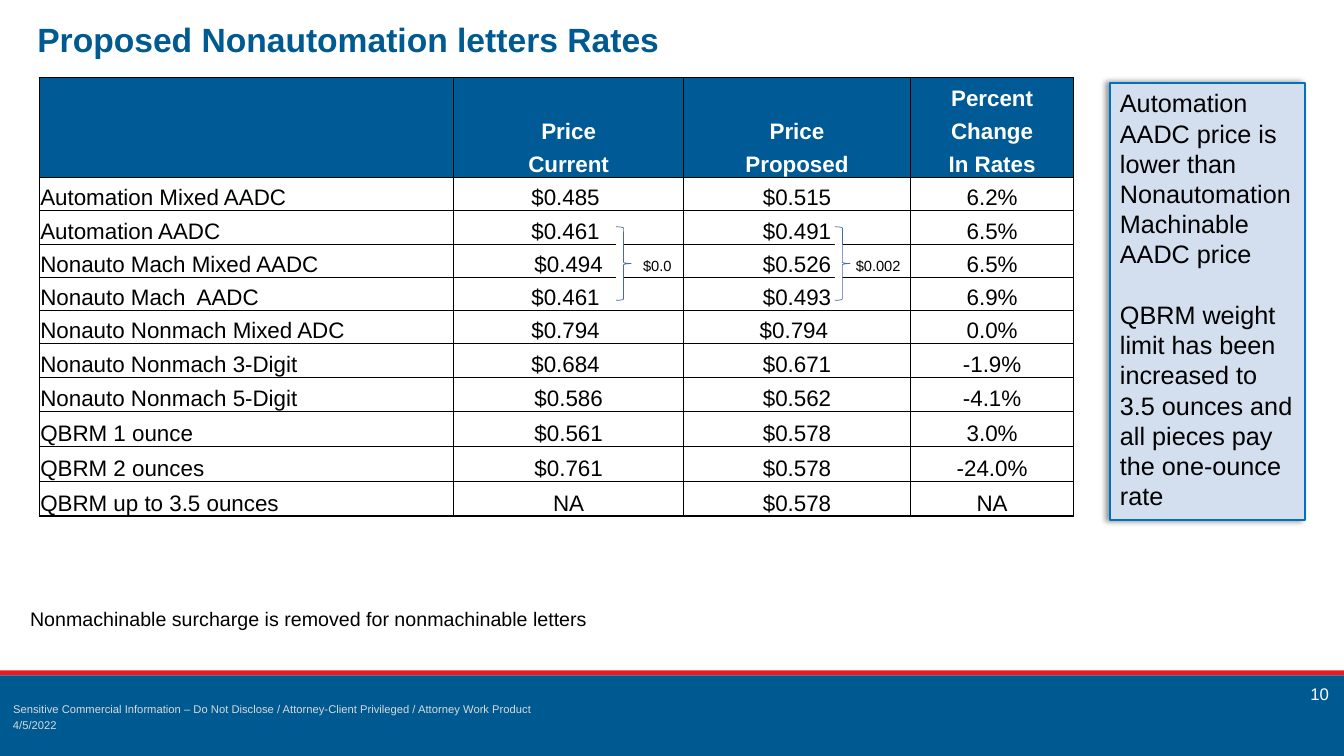
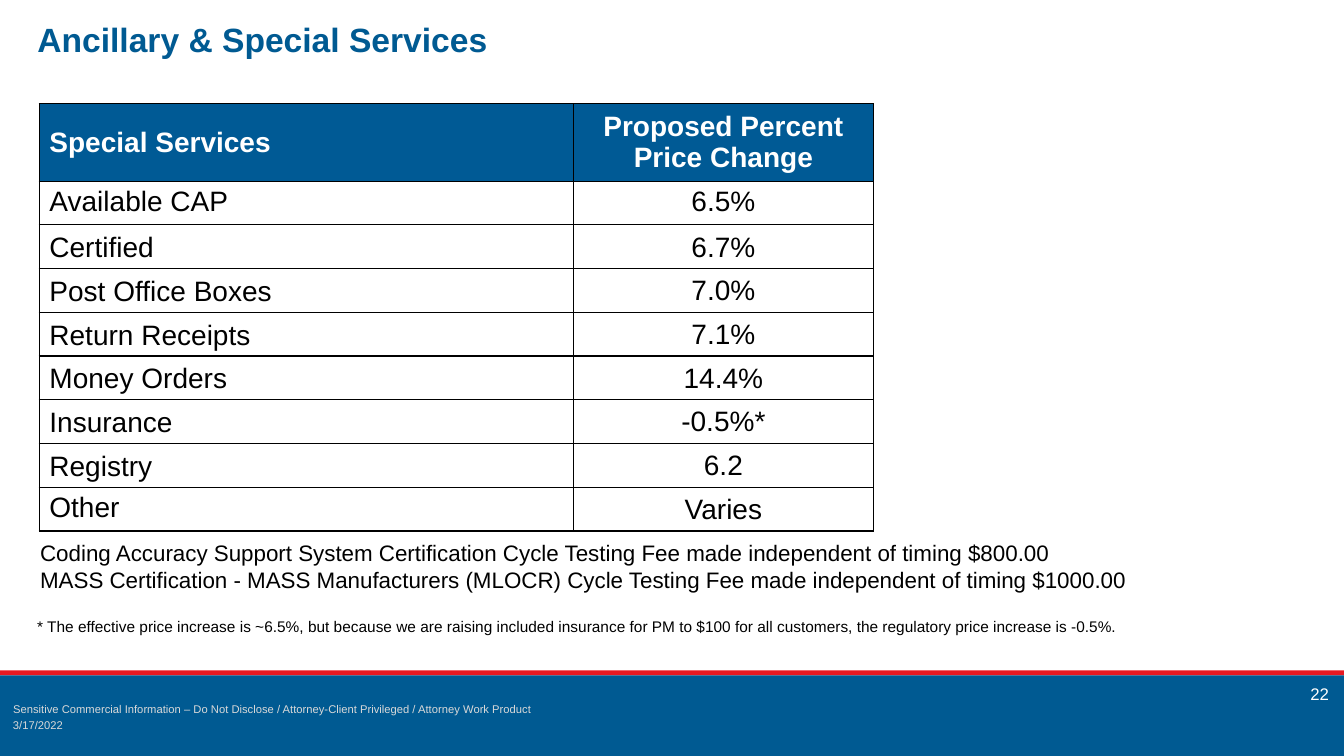
from lxml import etree
from pptx import Presentation, util as u
from pptx.dml.color import RGBColor
from pptx.enum import shapes, text
from pptx.oxml.ns import qn

Inches = u.Inches
ALIGN, ANCHOR = text.PP_ALIGN, text.MSO_ANCHOR
SHAPE = shapes.MSO_SHAPE

BLUE, HEADER_BLUE, RED = "005A92", "005A95", "E71921"
WHITE, BLACK, PALE_GREY = "FFFFFF", "000000", "D9D9D9"
CALLOUT_FILL, CALLOUT_LINE, BRACE_LINE = "D3DFEE", "0070C0", "4A66AC"

TITLE_FORMAT = {"size": u.Pt(24), "bold": True}
FOOTER_FORMAT = {"size": u.Pt(8)}
NO_GRID_STYLE = "{2D5ABB26-0587-4C30-8999-92F81FD0307C}"
THIN_MARGINS = {"margin_left": Inches(0.01), "margin_right": Inches(0.01),
                "margin_top": Inches(0.01), "margin_bottom": 0}
CONFIDENTIAL = ("Sensitive Commercial Information – Do Not Disclose / "
                "Attorney-Client Privileged / Attorney Work Product")

LETTER_HEADER = [
    ("", "", "", "Percent"),
    ("", "Price", "Price", "Change"),
    ("", "Current", "Proposed", "In Rates"),
]
LETTER_RATES = [
    ("Automation Mixed AADC", "$0.485 ", "$0.515", "6.2%"),
    ("Automation AADC", "$0.461 ", "$0.491", "6.5%"),
    ("Nonauto Mach Mixed AADC", "$0.494", "$0.526", "6.5%"),
    ("Nonauto Mach  AADC", "$0.461 ", "$0.493", "6.9%"),
    ("Nonauto Nonmach Mixed ADC", "$0.794 ", "$0.794 ", "0.0%"),
    ("Nonauto Nonmach 3-Digit", "$0.684 ", "$0.671", "-1.9%"),
    ("Nonauto Nonmach 5-Digit", "$0.586", "$0.562", "-4.1%"),
    ("QBRM 1 ounce", "$0.561", "$0.578", "3.0%"),
    ("QBRM 2 ounces", "$0.761", "$0.578", "-24.0%"),
    ("QBRM up to 3.5 ounces", "NA", "$0.578", "NA"),
]
SERVICES = [
    ("Available CAP", "6.5%"),
    ("Certified", "6.7%"),
    ("Post Office Boxes", "7.0%"),
    ("Return Receipts", "7.1%"),
    ("Money Orders", "14.4%"),
    ("Insurance", "-0.5%*"),
    ("Registry", "6.2"),
    ("Other", "Varies"),
]


def color(value):
    return RGBColor.from_string(value)


def set_all(target, values):
    for name, value in values.items():
        setattr(target, name, value)


def write(frame, lines, font, ink=BLACK, **para_format):
    """Put each line in its own paragraph of the text frame."""
    for index, line in enumerate(lines):
        para = frame.paragraphs[0] if index == 0 else frame.add_paragraph()
        set_all(para, para_format)
        if line:
            span = para.add_run()
            span.text = line
            set_all(span.font, {"name": "Arial", **font})
            span.font.color.rgb = color(ink)


def add_text(page, at, lines, font, ink=BLACK, anchor=ANCHOR.TOP, **para_format):
    box = page.shapes.add_textbox(*map(Inches, at))
    set_all(box.text_frame, {"word_wrap": True, "vertical_anchor": anchor})
    write(box.text_frame, lines, font, ink, **para_format)
    return box


def add_figure(page, kind, at, fill, line=None, width=0.5):
    figure = page.shapes.add_shape(kind, *map(Inches, at))
    figure.shadow.inherit = False
    figure.fill.solid()
    figure.fill.fore_color.rgb = color(fill)
    if line:
        figure.line.color.rgb = color(line)
        figure.line.width = u.Pt(width)
    else:
        figure.line.fill.background()
    return figure


def add_shadow(figure):
    """Cast a soft shadow to the left of the figure."""
    effects = figure.element.spPr.find(qn("a:effectLst"))
    shadow = etree.SubElement(effects, qn("a:outerShdw"), blurRad=str(u.Pt(4)),
                              dist=str(u.Pt(3)), dir=str(180 * 60000))
    ink = etree.SubElement(shadow, qn("a:srgbClr"), val=BLACK)
    etree.SubElement(ink, qn("a:alpha"), val="40000")


def set_borders(cell, widths):
    """Draw black borders; widths maps a side (L, R, T, B) to points."""
    properties = cell._tc.get_or_add_tcPr()
    for index, (side, width) in enumerate(widths.items()):
        line = etree.Element(qn(f"a:ln{side}"), w=str(u.Pt(width)))
        fill = etree.SubElement(line, qn("a:solidFill"))
        etree.SubElement(fill, qn("a:srgbClr"), val=BLACK)
        properties.insert(index, line)


def format_cell(cell, lines, font, header, borders, align, layout):
    set_all(cell, layout)
    write(cell.text_frame, lines, {**font, "bold": header},
          WHITE if header else BLACK, alignment=align)
    if header:
        cell.fill.solid()
        cell.fill.fore_color.rgb = color(HEADER_BLUE)
    else:
        cell.fill.background()
    set_borders(cell, borders)


def add_grid(page, left, top, widths, heights):
    frame = page.shapes.add_table(len(heights), len(widths), Inches(left), Inches(top),
                                  Inches(sum(widths)), Inches(sum(heights)))
    frame.element.xpath(".//a:tableStyleId")[0].text = NO_GRID_STYLE
    table = frame.table
    set_all(table, {"first_row": False, "horz_banding": False})
    for column, width in zip(table.columns, widths):
        column.width = Inches(width)
    for row, height in zip(table.rows, heights):
        row.height = Inches(height)
    return table


def add_letter_table(page):
    rows = LETTER_HEADER + LETTER_RATES
    tall_count = 4
    plain = [0.33] * (len(rows) - tall_count)
    heights = plain + [(4.35 - sum(plain)) / tall_count] * tall_count
    table = add_grid(page, 0.39, 0.77, [4.11, 2.28, 2.25, 1.62], heights)
    last_header, last = len(LETTER_HEADER) - 1, len(rows) - 1
    for r, values in enumerate(rows):
        borders = {"L": 1, "R": 1}
        if r == 0 or r > last_header:
            borders["T"] = 1 if r == 0 else 0.5
        if r >= last_header:
            borders["B"] = 1 if r == last else 0.5
        for c, value in enumerate(values):
            format_cell(table.cell(r, c), [value], {"size": u.Pt(16)}, r <= last_header,
                        borders, ALIGN.CENTER if c else ALIGN.LEFT,
                        {"vertical_anchor": ANCHOR.BOTTOM, **THIN_MARGINS})


def add_service_table(page):
    rows = [("Special Services", "Proposed Percent\nPrice Change")] + SERVICES
    header_height = 0.76
    row_height = (4.23 - header_height) / len(SERVICES)
    table = add_grid(page, 0.39, 1.03, [5.3, 2.97],
                     [header_height] + [row_height] * len(SERVICES))
    borders = dict.fromkeys("LRTB", 1)
    for r, values in enumerate(rows):
        if r == 0:
            layouts = [{"vertical_anchor": ANCHOR.MIDDLE}] * 2
        elif r == 1:
            layouts = [{"vertical_anchor": ANCHOR.TOP}] * 2
        else:
            label_anchor = ANCHOR.TOP if r == len(SERVICES) else ANCHOR.BOTTOM
            layouts = [{"vertical_anchor": label_anchor},
                       {"vertical_anchor": ANCHOR.MIDDLE, **THIN_MARGINS}]
        for c, (value, layout) in enumerate(zip(values, layouts)):
            format_cell(table.cell(r, c), value.split("\n"), {"size": u.Pt(20)}, r == 0,
                        borders, ALIGN.CENTER if c else ALIGN.LEFT, layout)


def add_difference(page, brace_left, label_left, label):
    """Brace the rows being compared and label their price difference."""
    add_figure(page, SHAPE.RIGHT_BRACE, (brace_left, 2.25, 0.15, 0.73), WHITE, BRACE_LINE)
    add_text(page, (label_left, 2.5, 0.73, 0.28), [label], {"size": u.Pt(10.5)})


def add_callout(page, lines):
    callout = add_figure(page, SHAPE.RECTANGLE, (11.01, 0.82, 1.93, 4.34),
                         CALLOUT_FILL, CALLOUT_LINE, 1.5)
    add_shadow(callout)
    frame = callout.text_frame
    set_all(frame, {"word_wrap": True, "vertical_anchor": ANCHOR.TOP})
    write(frame, lines, {"size": u.Pt(18)}, alignment=ALIGN.LEFT)
    for para in frame.paragraphs[1:]:
        para.space_before = u.Pt(21.6)


def furnish_layout(layout, page):
    """Place the title and move the shared bands and notice from page to layout."""
    title = layout.placeholders[0]
    set_all(title, dict(zip(("left", "top", "width", "height"),
                            map(Inches, (0.27, 0.03, 12.85, 0.76)))))
    notice = add_text(page, (0, 6.88, 6.02, 0.26), [CONFIDENTIAL], FOOTER_FORMAT,
                      PALE_GREY, line_spacing=1.3)
    notice.text_frame.margin_left = Inches(0.13)
    bands = [add_figure(page, SHAPE.RECTANGLE, (0, top, 13.33, height), fill)
             for top, height, fill in ((6.65, 0.05, RED), (6.7, 0.8, BLUE))]
    for part in (*bands, notice):
        layout.shapes.element.append(part.element)


def add_page(deck, title, number, date):
    layout = deck.slide_layouts.get_by_name("Title Only")
    page = deck.slides.add_slide(layout)
    if len(deck.slides) == 1:
        furnish_layout(layout, page)
    frame = page.shapes.title.text_frame
    set_all(frame, {"word_wrap": True, "vertical_anchor": ANCHOR.MIDDLE,
                    "auto_size": text.MSO_AUTO_SIZE.NONE})
    write(frame, [title], TITLE_FORMAT, BLUE, alignment=ALIGN.LEFT, line_spacing=0.9)
    add_text(page, (10.61, 6.73, 2.67, 0.25), [number], {"size": u.Pt(12)}, WHITE,
             alignment=ALIGN.RIGHT)
    add_text(page, (0.03, 7.06, 1.25, 0.26), [date], FOOTER_FORMAT, PALE_GREY,
             ANCHOR.MIDDLE)
    return page


def build_letters(deck):
    page = add_page(deck, "Proposed Nonautomation letters Rates", "10", "4/5/2022")
    add_letter_table(page)
    add_difference(page, 6.11, 6.28, "$0.0")
    add_difference(page, 8.28, 8.39, "$0.002")
    add_callout(page, [
        "Automation AADC price is lower than Nonautomation Machinable AADC price",
        "QBRM weight limit has been increased to 3.5 ounces and all pieces pay "
        "the one-ounce rate",
    ])
    add_text(page, (0.2, 5.97, 8.72, 0.34),
             ["Nonmachinable surcharge is removed for nonmachinable letters"],
             {"size": u.Pt(14)})


def build_services(deck):
    page = add_page(deck, "Ancillary & Special Services", "22", "3/17/2022")
    add_service_table(page)
    add_text(page, (0.3, 5.3, 11.67, 0.64), [
        "Coding Accuracy Support System Certification Cycle Testing Fee made "
        "independent of timing $800.00",
        "MASS Certification - MASS Manufacturers (MLOCR) Cycle Testing Fee made "
        "independent of timing $1000.00",
    ], {"size": u.Pt(16)})
    add_text(page, (0.27, 6.07, 11.32, 0.29), [
        "* The effective price increase is ~6.5%, but because we are raising included "
        "insurance for PM to $100 for all customers, the regulatory price increase is -0.5%.",
    ], {"size": u.Pt(11)})


def main():
    deck = Presentation()
    deck.slide_width, deck.slide_height = Inches(13.33), Inches(7.5)
    build_letters(deck)
    build_services(deck)
    deck.save("out.pptx")


if __name__ == "__main__":
    main()
